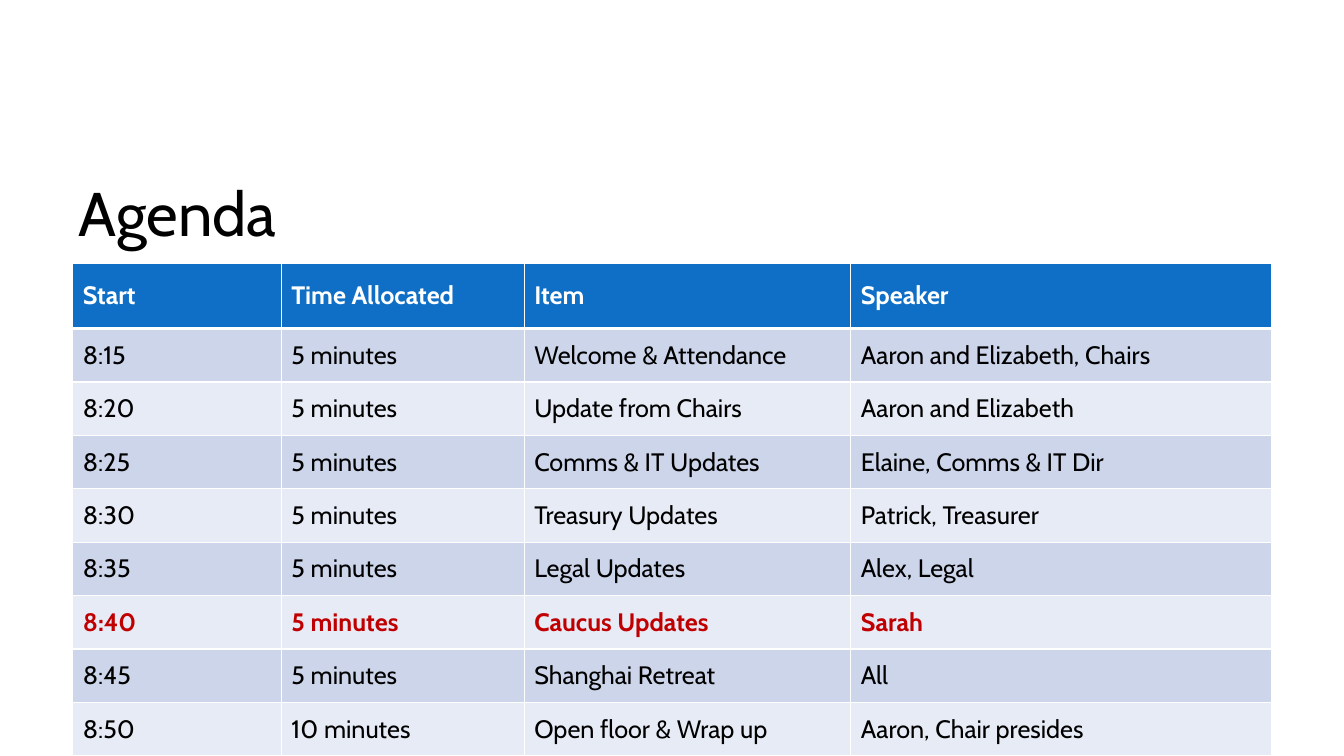
from dataclasses import dataclass

import pptx
import pptx.dml.color
import pptx.enum.text
import pptx.oxml
import pptx.oxml.ns
import pptx.presentation
import pptx.slide
import pptx.table
import pptx.text.text
import pptx.util

FONT = "Cabin"
BLACK, WHITE, RED = "000000", "FFFFFF", "C00000"
HEADER_BLUE = "0F6FC6"
BANDS = ("CCD5EA", "E7EBF5")
COLUMN_WIDTHS = (149, 173.5, 233.3, 300.2)
HEADER_HEIGHT, ITEM_HEIGHT = 46.8, 38.16
THIN, THICK = 1, 3


@dataclass(frozen=True)
class AgendaRow:
    start: str
    duration: str
    item: str
    speaker: str
    color: str = BLACK
    bold: bool = False

    def texts(self) -> tuple[str, ...]:
        return self.start, self.duration, self.item, self.speaker


AGENDA = (
    AgendaRow("Start", "Time Allocated", "Item", "Speaker", WHITE, True),
    AgendaRow("8:15", "5 minutes", "Welcome & Attendance", "Aaron and Elizabeth, Chairs"),
    AgendaRow("8:20", "5 minutes", "Update from Chairs", "Aaron and Elizabeth"),
    AgendaRow("8:25", "5 minutes", "Comms & IT Updates", "Elaine, Comms & IT Dir"),
    AgendaRow("8:30", "5 minutes", "Treasury Updates", "Patrick, Treasurer"),
    AgendaRow("8:35", "5 minutes", "Legal Updates", "Alex, Legal"),
    AgendaRow("8:40", "5 minutes", "Caucus Updates", "Sarah", RED, True),
    AgendaRow("8:45", "5 minutes", "Shanghai Retreat", "All"),
    AgendaRow("8:50", "10 minutes", "Open floor & Wrap up", "Aaron, Chair presides"),
)


def rgb(color: str) -> pptx.dml.color.RGBColor:
    return pptx.dml.color.RGBColor.from_string(color)


def add_run(paragraph: pptx.text.text._Paragraph, text: str, size: float,
            color: str, bold: bool = False) -> None:
    run = paragraph.add_run()
    run.text = text
    run.font.name = FONT
    run.font.size = pptx.util.Pt(size)
    run.font.bold = bold
    run.font.color.rgb = rgb(color)


def set_borders(cell: pptx.table._Cell, top: float, bottom: float) -> None:
    properties = cell._tc.get_or_add_tcPr()
    for side, width in (("L", THIN), ("R", THIN), ("T", top), ("B", bottom)):
        properties.append(pptx.oxml.parse_xml(
            f'<a:ln{side} {pptx.oxml.ns.nsdecls("a")} w="{pptx.util.Pt(width)}">'
            f'<a:solidFill><a:srgbClr val="{WHITE}"/></a:solidFill></a:ln{side}>'))


def add_title(slide: pptx.slide.Slide) -> None:
    title = slide.shapes.title
    title.left, title.top = pptx.util.Pt(49), pptx.util.Pt(102.2)
    title.width, title.height = pptx.util.Pt(749.5), pptx.util.Pt(104.4)
    title.text_frame.vertical_anchor = pptx.enum.text.MSO_ANCHOR.MIDDLE
    heading = title.text_frame.paragraphs[0]
    heading.alignment = pptx.enum.text.PP_ALIGN.LEFT
    heading.line_spacing = 0.9
    add_run(heading, "Agenda", 44, BLACK)


def add_agenda(slide: pptx.slide.Slide) -> None:
    height = HEADER_HEIGHT + ITEM_HEIGHT * (len(AGENDA) - 1)
    agenda = slide.shapes.add_table(
        len(AGENDA), len(COLUMN_WIDTHS), pptx.util.Pt(52), pptx.util.Pt(187.9),
        pptx.util.Pt(sum(COLUMN_WIDTHS)), pptx.util.Pt(height)).table
    for column, width in zip(agenda.columns, COLUMN_WIDTHS):
        column.width = pptx.util.Pt(width)

    for index, entry in enumerate(AGENDA):
        is_header = index == 0
        agenda.rows[index].height = pptx.util.Pt(HEADER_HEIGHT if is_header else ITEM_HEIGHT)
        background = HEADER_BLUE if is_header else BANDS[(index - 1) % 2]
        for cell, text in zip(agenda.rows[index].cells, entry.texts()):
            # Borders come before the fill in the cell properties
            set_borders(cell, THICK if index == 1 else THIN, THICK if is_header else THIN)
            cell.fill.solid()
            cell.fill.fore_color.rgb = rgb(background)
            cell.vertical_anchor = pptx.enum.text.MSO_ANCHOR.MIDDLE
            add_run(cell.text_frame.paragraphs[0], text, 18, entry.color, entry.bold)


def main() -> None:
    deck = pptx.Presentation()
    deck.slide_width, deck.slide_height = pptx.util.Pt(960), pptx.util.Pt(540)
    slide = deck.slides.add_slide(deck.slide_layouts[5])
    slide.background.fill.solid()
    slide.background.fill.fore_color.rgb = rgb(WHITE)

    # Heading
    add_title(slide)

    # Schedule
    add_agenda(slide)

    deck.save("out.pptx")


if __name__ == "__main__":
    main()
